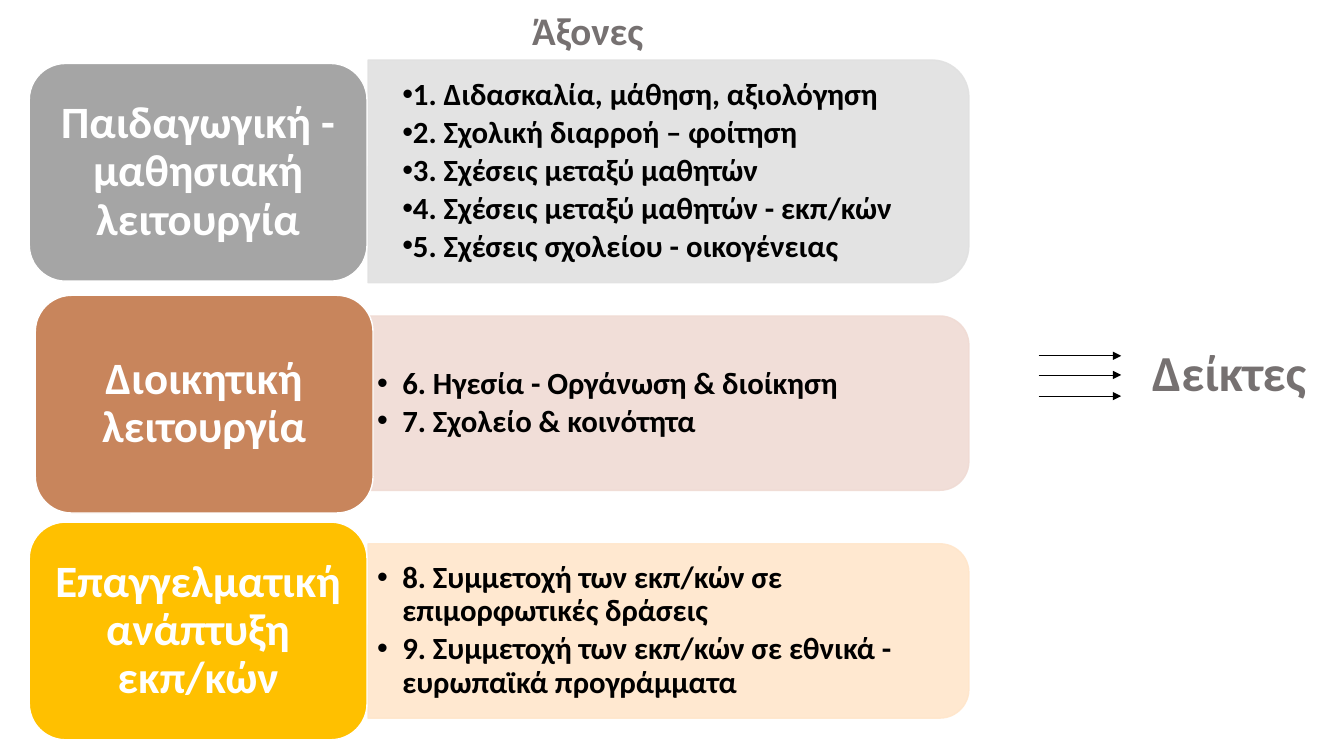
from lxml.etree import SubElement
from pptx import Presentation
from pptx.dml.color import RGBColor
from pptx.enum.shapes import MSO_CONNECTOR, MSO_SHAPE
from pptx.enum.text import MSO_ANCHOR, PP_ALIGN
from pptx.oxml.ns import qn
from pptx.util import Inches, Pt


def paint(part, shade, alpha=None):
    part.solid()
    part.fore_color.rgb = RGBColor.from_string(shade)
    if alpha:
        tone = part._xPr.find(qn("a:solidFill"))[0]
        SubElement(tone, qn("a:alpha"), val=str(alpha * 1000))


def write(shape, lines, size, shade, space=0.9, after=0):
    frame = shape.text_frame
    frame.text = "\n".join(lines)
    for para in frame.paragraphs:
        para.line_spacing = space
        para.space_after = Pt(after)
        para.font.name = "Calibri"
        para.font.size = Pt(size)
        para.font.bold = True
        paint(para.font.fill, shade)
    return frame


deck = Presentation()
deck.slide_width, deck.slide_height = Inches(13.33), Inches(7.5)
slide = deck.slides.add_slide(deck.slide_layouts[6])
shapes = slide.shapes

left, width = 3.65, 5.96
block_w, block_h = 3.35, 2.16
rows = [
    ("Παιδαγωγική - μαθησιακή λειτουργία", 0.29, 0.63, "A5A5A5",
     1.7, 2.21, "E1E1E1", 0.15, 0.19, 0,
     ["1. Διδασκαλία, μάθηση, αξιολόγηση",
      "2. Σχολική διαρροή – φοίτηση",
      "3. Σχέσεις μεταξύ μαθητών",
      "4. Σχέσεις μεταξύ μαθητών - εκπ/κών",
      "5. Σχέσεις σχολείου - οικογένειας"]),
    ("Διοικητική λειτουργία", 0.35, 2.93, "C8855C",
     4, 1.73, "F0DBD4", 0.09, 0.25, -0.25,
     ["6. Ηγεσία - Οργάνωση & διοίκηση",
      "7. Σχολείο & κοινότητα"]),
    ("Επαγγελματική ανάπτυξη εκπ/κών", 0.29, 5.18, "FFC000",
     6.26, 1.73, "FFE6CB", 0.09, 0.25, -0.25,
     ["8. Συμμετοχή των εκπ/κών σε επιμορφωτικές δράσεις",
      "9. Συμμετοχή των εκπ/κών σε εθνικά - ευρωπαϊκά προγράμματα"]),
]

for name, x, y, shade, mid, high, tint, inset, margin, indent, items in rows:
    panel = shapes.add_shape(
        MSO_SHAPE.ROUND_2_SAME_RECTANGLE,
        Inches(left + (width - high) / 2), Inches(mid - width / 2),
        Inches(high), Inches(width))
    panel.rotation = 90
    panel.shadow.inherit = False
    paint(panel.fill, tint, 90)
    paint(panel.line.fill, tint, 90)
    panel.line.width = Pt(1)

    box = shapes.add_textbox(Inches(left), Inches(mid - high / 2 + 0.1),
                             Inches(width - 0.1), Inches(high - 0.2))
    frame = write(box, items, 22, "000000", after=3.3)
    frame.word_wrap = True
    frame.vertical_anchor = MSO_ANCHOR.MIDDLE
    frame.margin_left = frame.margin_right = Inches(inset)
    for para in frame.paragraphs:
        para.level = 1
        props = para._p.get_or_add_pPr()
        props.set("marL", str(Inches(margin)))
        props.set("indent", str(Inches(indent)))
        SubElement(props, qn("a:buFont"), typeface="Arial")
        SubElement(props, qn("a:buChar"), char="•")
        props.append(props.find(qn("a:defRPr")))

    block = shapes.add_shape(MSO_SHAPE.ROUNDED_RECTANGLE, Inches(x), Inches(y),
                             Inches(block_w), Inches(block_h))
    block.shadow.inherit = False
    paint(block.fill, shade)
    paint(block.line.fill, "FFFFFF")
    block.line.width = Pt(1)
    frame = write(block, [name], 32, "FFFFFF")
    frame.word_wrap = True
    frame.vertical_anchor = MSO_ANCHOR.MIDDLE
    frame.margin_left = frame.margin_right = Inches(0.13)
    frame.paragraphs[0].alignment = PP_ALIGN.CENTER

for word, x, y, wide, high, size, space in [
        ("Άξονες", 5.18, 0.14, 1.32, 0.44, 27.9, 0.7),
        ("Δείκτες", 11.33, 3.4, 1.74, 0.82, 36, 0.9)]:
    label = shapes.add_textbox(Inches(x), Inches(y), Inches(wide), Inches(high))
    write(label, [word], size, "767171", space)

for y in (3.53, 3.72, 3.93):
    arrow = shapes.add_connector(MSO_CONNECTOR.STRAIGHT, Inches(10.3), Inches(y),
                                 Inches(11.12), Inches(y))
    paint(arrow.line.fill, "000000")
    arrow.line.width = Pt(0.5)
    SubElement(arrow.line._get_or_add_ln(), qn("a:tailEnd"), type="triangle")
    SubElement(arrow._element.spPr, qn("a:effectLst"))

deck.save("out.pptx")
